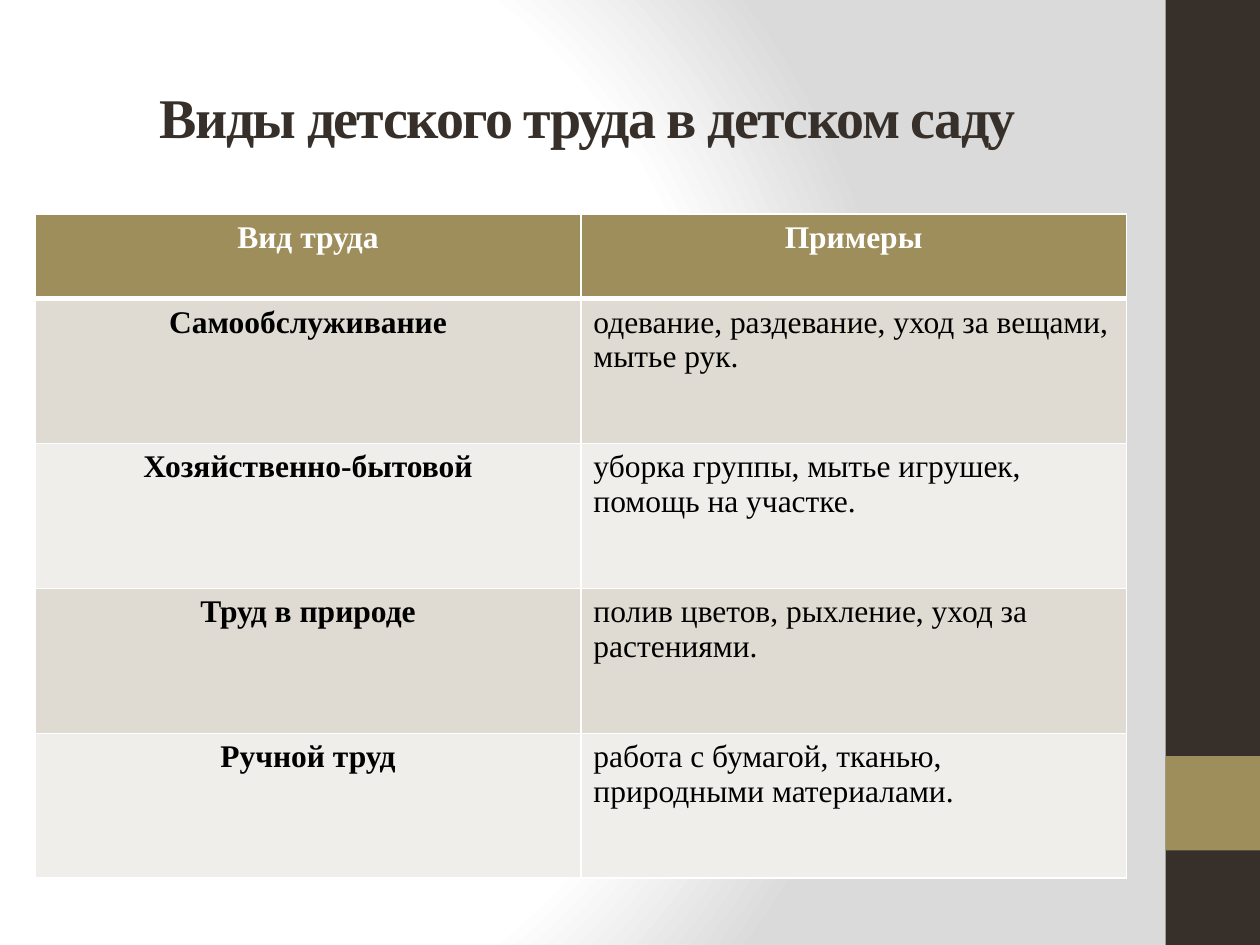
from pptx import Presentation
from pptx.dml.color import RGBColor as Color
from pptx.enum.shapes import MSO_SHAPE as Shape
from pptx.enum.text import MSO_ANCHOR as Anchor, PP_ALIGN as Align
from pptx.oxml import parse_xml
from pptx.oxml.ns import nsdecls, qn
from pptx.util import Inches, Pt

WHITE = Color(0xFF, 0xFF, 0xFF)
BLACK = Color(0, 0, 0)
BROWN = Color(0x37, 0x30, 0x2A)
OLIVE = Color(0x9E, 0x8E, 0x5C)
SAND = Color(0xDF, 0xDB, 0xD2)
CREAM = Color(0xF0, 0xEE, 0xEA)
GREY = Color(0xDA, 0xDA, 0xDA)

WIDTH, HEIGHT = Inches(10), Inches(7.5)
TITLE_ONLY = 5
ROWS = [
    ("Вид труда", "Примеры"),
    ("Самообслуживание", "одевание, раздевание, уход за вещами, мытье рук."),
    ("Хозяйственно-бытовой", "уборка группы, мытье игрушек, помощь на участке."),
    ("Труд в природе", "полив цветов, рыхление, уход за растениями."),
    ("Ручной труд", "работа с бумагой, тканью, природными материалами."),
]


class SlideBuilder:
    font_name = "Times New Roman"
    title_size = Pt(32)
    table_size = Pt(18)

    def __init__(self, deck):
        self.slide = deck.slides.add_slide(deck.slide_layouts[TITLE_ONLY])

    def style(self, para, size, color, bold, align):
        para.alignment = align
        para.font.name = self.font_name
        para.font.size = size
        para.font.bold = bold
        para.font.color.rgb = color

    def background(self, stops):
        self.slide.background.fill.solid()
        properties = self.slide.element.find(".//" + qn("p:bgPr"))
        marks = "".join(
            f'<a:gs pos="{share * 1000}"><a:srgbClr val="{color}"/></a:gs>'
            for share, color in stops
        )
        gradient = parse_xml(
            f'<a:gradFill {nsdecls("a")} rotWithShape="1"><a:gsLst>{marks}</a:gsLst>'
            '<a:path path="circle">'
            '<a:fillToRect l="20000" t="50000" r="100000" b="50000"/>'
            "</a:path></a:gradFill>"
        )
        properties.replace(properties[0], gradient)

    def block(self, left, top, width, height, color):
        box = self.slide.shapes.add_shape(
            Shape.RECTANGLE,
            int(WIDTH * left), int(HEIGHT * top),
            int(WIDTH * width), int(HEIGHT * height),
        )
        box.shadow.inherit = False
        box.fill.solid()
        box.fill.fore_color.rgb = color
        box.line.fill.background()

    def title(self, text):
        box = self.slide.shapes.title
        box.left, box.top = Inches(0.5), Inches(0.3)
        box.width, box.height = Inches(8.33), Inches(1.25)
        frame = box.text_frame
        frame.text = text
        frame.vertical_anchor = Anchor.MIDDLE
        para = frame.paragraphs[0]
        self.style(para, self.title_size, BROWN, True, Align.CENTER)
        para.runs[0].font._element.set("spc", "-100")

    def borders(self, cell, bottom):
        properties = cell._tc.get_or_add_tcPr()
        sides = [("L", 1), ("R", 1), ("T", 1), ("B", bottom)]
        for index, (side, points) in enumerate(sides):
            properties.insert(index, parse_xml(
                f'<a:ln{side} {nsdecls("a")} w="{Pt(points)}"><a:solidFill>'
                f'<a:srgbClr val="{WHITE}"/></a:solidFill></a:ln{side}>'
            ))

    def cell(self, cell, text, row, column):
        header = row == 0
        cell.text = text
        cell.fill.solid()
        cell.fill.fore_color.rgb = OLIVE if header else (CREAM, SAND)[row % 2]
        strong = header or column == 0
        self.style(
            cell.text_frame.paragraphs[0], self.table_size,
            WHITE if header else BLACK, strong,
            Align.CENTER if strong else Align.LEFT,
        )
        self.borders(cell, 3 if header else 1)

    def table(self, rows):
        table = self.slide.shapes.add_table(
            len(rows), len(rows[0]),
            Inches(0.28), Inches(1.7), Inches(8.66), Inches(5.27),
        ).table
        table.first_row = table.horz_banding = False
        for row, texts in enumerate(rows):
            table.rows[row].height = Inches(1.15 if row else 0.67)
            for column, text in enumerate(texts):
                self.cell(table.cell(row, column), text, row, column)


def main():
    deck = Presentation()
    deck.slide_width, deck.slide_height = WIDTH, HEIGHT
    page = SlideBuilder(deck)
    page.background([(0, WHITE), (75, WHITE), (100, GREY)])
    page.block(0.925, 0, 0.075, 1, BROWN)
    page.block(0.925, 0.8, 0.075, 0.1, OLIVE)
    page.title("Виды детского труда в детском саду")
    page.table(ROWS)
    deck.save("out.pptx")


if __name__ == "__main__":
    main()
